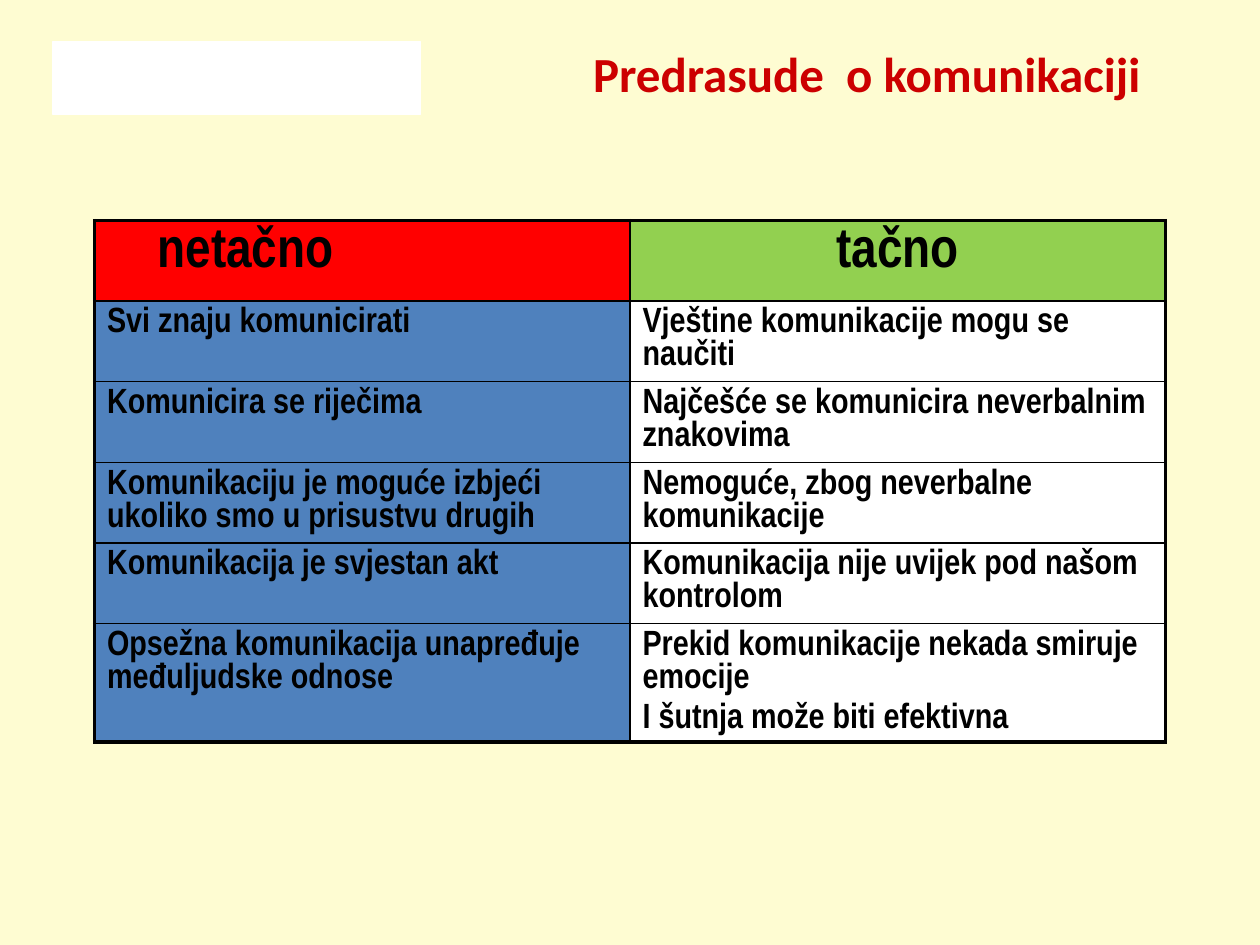
from dataclasses import dataclass

import pptx
import pptx.dml.color
import pptx.enum.shapes
import pptx.enum.text
import pptx.oxml.ns
import pptx.util
from lxml import etree

Inches = pptx.util.Inches
Points = pptx.util.Pt
Align = pptx.enum.text.PP_ALIGN


@dataclass(frozen=True)
class Theme:
    background: str = "FEFCD2"
    title: str = "CC0000"
    text: str = "000000"
    white: str = "FFFFFF"
    header_fills: tuple = ("FF0000", "92D050")
    body_fills: tuple = ("4F81BD", "FFFFFF")
    title_font: str = "Calibri"
    table_font: str = "Arial Narrow"
    title_size: int = 28
    header_size: int = 32
    body_size: int = 20
    outer_line: float = 2.25
    inner_line: float = 1


THEME = Theme()
WIDTH, HEIGHT = Inches(10), Inches(7.5)
ROW_HEIGHT = Inches(0.64)

HEADERS = ("netačno", "tačno")
CLAIMS = [
    (["Svi znaju komunicirati"], ["Vještine komunikacije mogu se naučiti"]),
    (["Komunicira se riječima"], ["Najčešće se komunicira neverbalnim znakovima"]),
    (["Komunikaciju je moguće izbjeći ukoliko smo u prisustvu drugih"],
     ["Nemoguće, zbog neverbalne komunikacije"]),
    (["Komunikacija je svjestan akt"], ["Komunikacija nije uvijek pod našom kontrolom"]),
    (["Opsežna komunikacija unapređuje međuljudske odnose"],
     ["Prekid komunikacije nekada smiruje emocije", "I šutnja može biti efektivna"]),
]


def share(left, top, width, height):
    """Turn shares of the slide into a box of lengths."""
    return (int(left * WIDTH), int(top * HEIGHT), int(width * WIDTH), int(height * HEIGHT))


def paint(fill, color):
    fill.solid()
    fill.fore_color.rgb = pptx.dml.color.RGBColor.from_string(color)


def add_run(paragraph, text, font_name, size, color):
    run = paragraph.add_run()
    run.text = text
    run.font.name = font_name
    run.font.size = Points(size)
    run.font.bold = True
    run.font.color.rgb = pptx.dml.color.RGBColor.from_string(color)


def place_title(slide, box):
    title = slide.shapes.title
    title.left, title.top, title.width, title.height = box
    frame = title.text_frame
    frame.word_wrap = True
    frame.vertical_anchor = pptx.enum.text.MSO_ANCHOR.MIDDLE
    frame.margin_right = Inches(0.2)
    paragraph = frame.paragraphs[0]
    paragraph.alignment = Align.RIGHT
    paragraph.line_spacing = 0.8
    add_run(paragraph, "Predrasude  o komunikaciji", THEME.title_font,
            THEME.title_size, THEME.title)


def place_white_panel(slide, box):
    """Add the white panel behind the title."""
    panel = slide.shapes.add_shape(pptx.enum.shapes.MSO_SHAPE.RECTANGLE, *box)
    panel.shadow.inherit = False
    paint(panel.fill, THEME.white)
    paint(panel.line.fill, THEME.white)
    panel.line.width = Points(0.75)
    slide.shapes.title.element.addprevious(panel.element)


def set_borders(cell, outer_sides):
    properties = cell._tc.get_or_add_tcPr()
    qualified = pptx.oxml.ns.qn
    for side in "LRTB":
        width = THEME.outer_line if side in outer_sides else THEME.inner_line
        line = etree.SubElement(properties, qualified(f"a:ln{side}"), w=str(Points(width)))
        fill = etree.SubElement(line, qualified("a:solidFill"))
        etree.SubElement(fill, qualified("a:srgbClr"), val=THEME.text)


def fill_cell(cell, lines, size, color, outer_sides):
    set_borders(cell, outer_sides)
    paint(cell.fill, color)
    frame = cell.text_frame
    for index, line in enumerate(lines):
        paragraph = frame.add_paragraph() if index else frame.paragraphs[0]
        if index:
            paragraph.space_before = Points(0.2 * size)
        add_run(paragraph, line, THEME.table_font, size, THEME.text)


def place_table(slide, box):
    rows = [tuple([header] for header in HEADERS)] + CLAIMS
    table = slide.shapes.add_table(len(rows), len(HEADERS), *box).table
    for row_index, row in enumerate(rows):
        table.rows[row_index].height = ROW_HEIGHT
        is_header = row_index == 0
        fills = THEME.header_fills if is_header else THEME.body_fills
        size = THEME.header_size if is_header else THEME.body_size
        edge = "T" if is_header else "B" if row_index == len(rows) - 1 else ""
        for column, lines in enumerate(row):
            fill_cell(table.cell(row_index, column), lines, size, fills[column],
                      edge + "LR"[column])
    left_header, right_header = (
        table.cell(0, column).text_frame.paragraphs[0] for column in range(2))
    left_header._p.get_or_add_pPr().set("marL", str(Inches(0.4)))
    right_header.alignment = Align.CENTER


def main():
    presentation = pptx.Presentation()
    presentation.slide_width, presentation.slide_height = WIDTH, HEIGHT
    slide = presentation.slides.add_slide(presentation.slide_layouts[5])
    paint(slide.background.fill, THEME.background)
    place_title(slide, share(0.092, 0.044, 0.833, 0.077))
    place_white_panel(slide, share(0.042, 0.044, 0.292, 0.077))
    left, top, width, _ = share(0.075, 0.2333, 0.85, 0)
    place_table(slide, (left, top, width, ROW_HEIGHT * (len(CLAIMS) + 1)))
    presentation.save("out.pptx")


if __name__ == "__main__":
    main()
